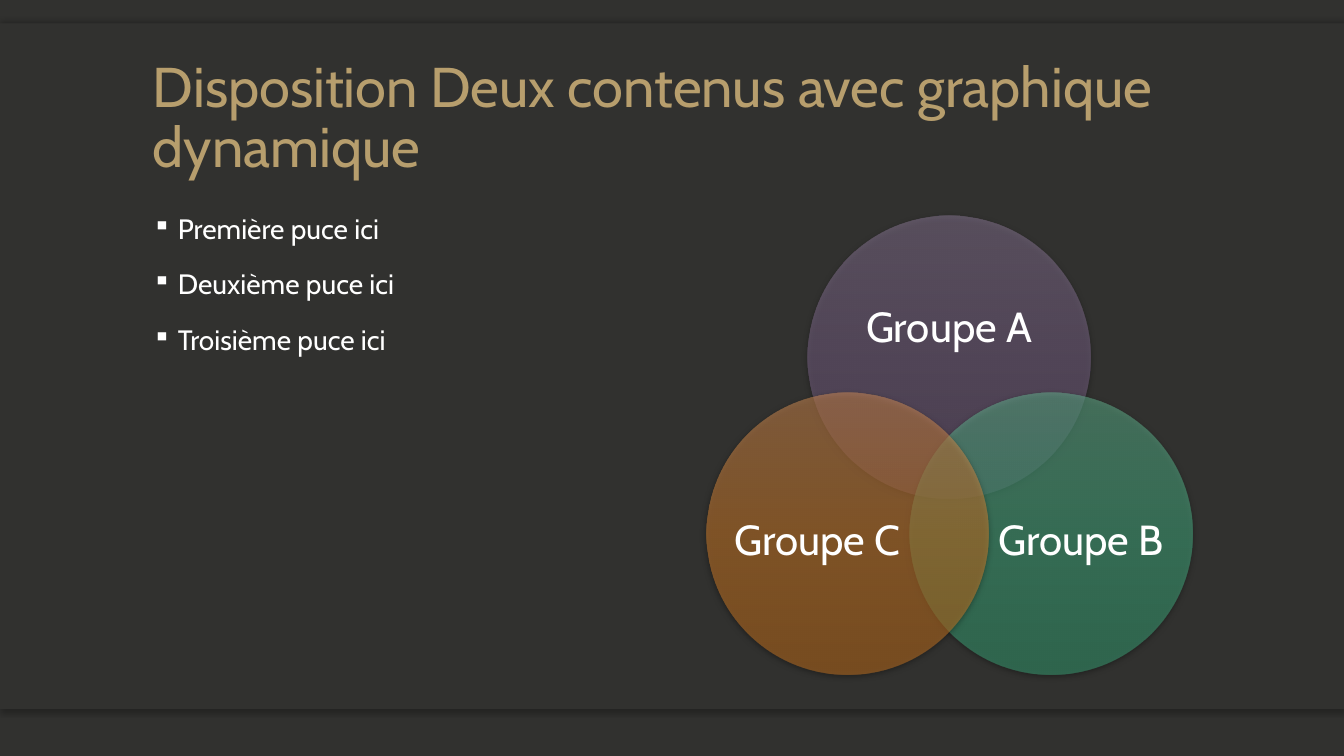
from math import cos, radians, sin

from lxml import etree
from pptx import Presentation
from pptx.dml.color import RGBColor
from pptx.enum.shapes import MSO_SHAPE as Shape
from pptx.enum.text import MSO_ANCHOR as Anchor, MSO_AUTO_SIZE as AutoSize, PP_ALIGN as Align
from pptx.oxml.ns import qn
from pptx.util import Inches, Pt

CHARCOAL = RGBColor(0x31, 0x31, 0x2F)
GOLD = RGBColor(0xB7, 0x9E, 0x6D)
WHITE = RGBColor(0xFF, 0xFF, 0xFF)
BLACK = RGBColor(0x00, 0x00, 0x00)
PURPLES = [RGBColor(0x90, 0x7D, 0x9B), RGBColor(0x82, 0x6A, 0x90), RGBColor(0x74, 0x5D, 0x81)]
GREENS = [RGBColor(0x69, 0xBB, 0x96), RGBColor(0x4B, 0xB8, 0x8A), RGBColor(0x3D, 0xA9, 0x7B)]
ORANGES = [RGBColor(0xDB, 0x94, 0x5A), RGBColor(0xDD, 0x86, 0x2F), RGBColor(0xCD, 0x77, 0x21)]

COLUMNS, ROWS = 160, 90


def add_node(parent, tag, **attributes):
    node = etree.SubElement(parent, qn(tag))
    for name, value in attributes.items():
        node.set(name, str(value))
    return node


def add_color(parent, color, opacity):
    node = add_node(parent, "a:srgbClr", val=color)
    add_node(node, "a:alpha", val=opacity * 1000)


class VennSlide:
    font_name = "Cabin"
    line_spacing = 0.9

    def __init__(self, presentation):
        self.cell_width = presentation.slide_width / COLUMNS
        self.cell_height = presentation.slide_height / ROWS
        self.slide = presentation.slides.add_slide(presentation.slide_layouts[5])
        background = self.slide.background.fill
        background.solid()
        background.fore_color.rgb = CHARCOAL

    def box(self, left, top, width, height):
        return (round(left * self.cell_width), round(top * self.cell_height),
                round(width * self.cell_width), round(height * self.cell_height))

    def format_text(self, text_frame, size, color, align=Align.LEFT, anchor=Anchor.TOP):
        text_frame.word_wrap = True
        text_frame.auto_size = AutoSize.NONE
        text_frame.vertical_anchor = anchor
        for paragraph in text_frame.paragraphs:
            paragraph.alignment = align
            paragraph.line_spacing = self.line_spacing
            for run in paragraph.runs:
                run.font.name = self.font_name
                run.font.size = Pt(size)
                run.font.color.rgb = color

    def plain_shape(self, kind, *place):
        shape = self.slide.shapes.add_shape(kind, *self.box(*place))
        shape.shadow.inherit = False
        shape.line.fill.background()
        return shape

    def shadow(self, shape, opacity, blur, distance, direction):
        effects = shape._element.spPr.find(qn("a:effectLst"))
        outer = add_node(effects, "a:outerShdw", blurRad=Pt(blur), dist=Pt(distance),
                         dir=direction * 60000, algn="ctr", rotWithShape=0)
        add_color(outer, BLACK, opacity)

    def panel(self, top, height, shadow_direction=None):
        shape = self.plain_shape(Shape.RECTANGLE, 0, top, COLUMNS, height)
        shape.fill.solid()
        shape.fill.fore_color.rgb = CHARCOAL
        if shadow_direction is not None:
            self.shadow(shape, 25, 4, 2, shadow_direction)

    def title(self, text, *place):
        shape = self.slide.shapes.title
        shape.left, shape.top, shape.width, shape.height = self.box(*place)
        shape.text_frame.text = text
        self.format_text(shape.text_frame, 40, GOLD, anchor=Anchor.BOTTOM)
        # Bring the title in front of the panels
        self.slide.shapes._spTree.append(shape._element)

    def bullets(self, items, *place):
        text_frame = self.slide.shapes.add_textbox(*self.box(*place)).text_frame
        text_frame.text = "\n".join(items)
        for index, paragraph in enumerate(text_frame.paragraphs):
            properties = paragraph._p.get_or_add_pPr()
            properties.set("marL", str(Inches(0.25)))
            properties.set("indent", str(Inches(-0.25)))
            add_node(properties, "a:buSzPct", val=90000)
            add_node(properties, "a:buChar", char="▪")
            if index:
                paragraph.space_before = Pt(18)
        self.format_text(text_frame, 20, WHITE)

    def circle(self, center_x, center_y, diameter, colors):
        shape = self.plain_shape(Shape.OVAL, center_x - diameter / 2,
                                 center_y - diameter / 2, diameter, diameter)
        gradient = etree.Element(qn("a:gradFill"), rotWithShape="1")
        stops = add_node(gradient, "a:gsLst")
        for index, color in enumerate(colors):
            add_color(add_node(stops, "a:gs", pos=index * 50000), color, 50)
        add_node(gradient, "a:lin", ang=90 * 60000, scaled=0)
        shape._element.spPr.find(qn("a:prstGeom")).addnext(gradient)
        self.shadow(shape, 63, 4.5, 1.5, 90)

    def label(self, text, center_x, center_y, width, height):
        text_frame = self.slide.shapes.add_textbox(
            *self.box(center_x - width / 2, center_y - height / 2, width, height)).text_frame
        text_frame.margin_left = text_frame.margin_right = 0
        text_frame.margin_top = text_frame.margin_bottom = 0
        text_frame.text = text
        self.format_text(text_frame, 30, WHITE, Align.CENTER, Anchor.MIDDLE)


def main():
    presentation = Presentation()
    presentation.slide_width, presentation.slide_height = Inches(13.333), Inches(7.5)
    venn = VennSlide(presentation)

    # Shaded bands and the main panel
    venn.panel(78.5, 5.9, 90)
    venn.panel(2.8, 5.9, 270)
    venn.panel(2.8, 81.6)

    # Title and bullets
    venn.title("Disposition Deux contenus avec graphique dynamique", 17, 5.5, 126, 16.5)
    venn.bullets(["Première puce ici", "Deuxième puce ici", "Troisième puce ici"],
                 17, 25, 60, 56)

    # Venn diagram: three circles evenly spaced around one centre
    center_x, center_y, orbit, diameter = 113, 56.5, 14, 33.6
    groups = [
        ("Groupe A", PURPLES, 0, -3.35, 24.6, 15.1),
        ("Groupe B", GREENS, 3.58, 1.05, 20.2, 18.5),
        ("Groupe C", ORANGES, -3.58, 1.05, 20.2, 18.5),
    ]
    for index, (name, colors, shift_x, shift_y, width, height) in enumerate(groups):
        angle = radians(-90 + index * 360 / len(groups))
        x, y = center_x + orbit * cos(angle), center_y + orbit * sin(angle)
        venn.circle(x, y, diameter, colors)
        venn.label(name, x + shift_x, y + shift_y, width, height)

    presentation.save("out.pptx")


if __name__ == "__main__":
    main()
